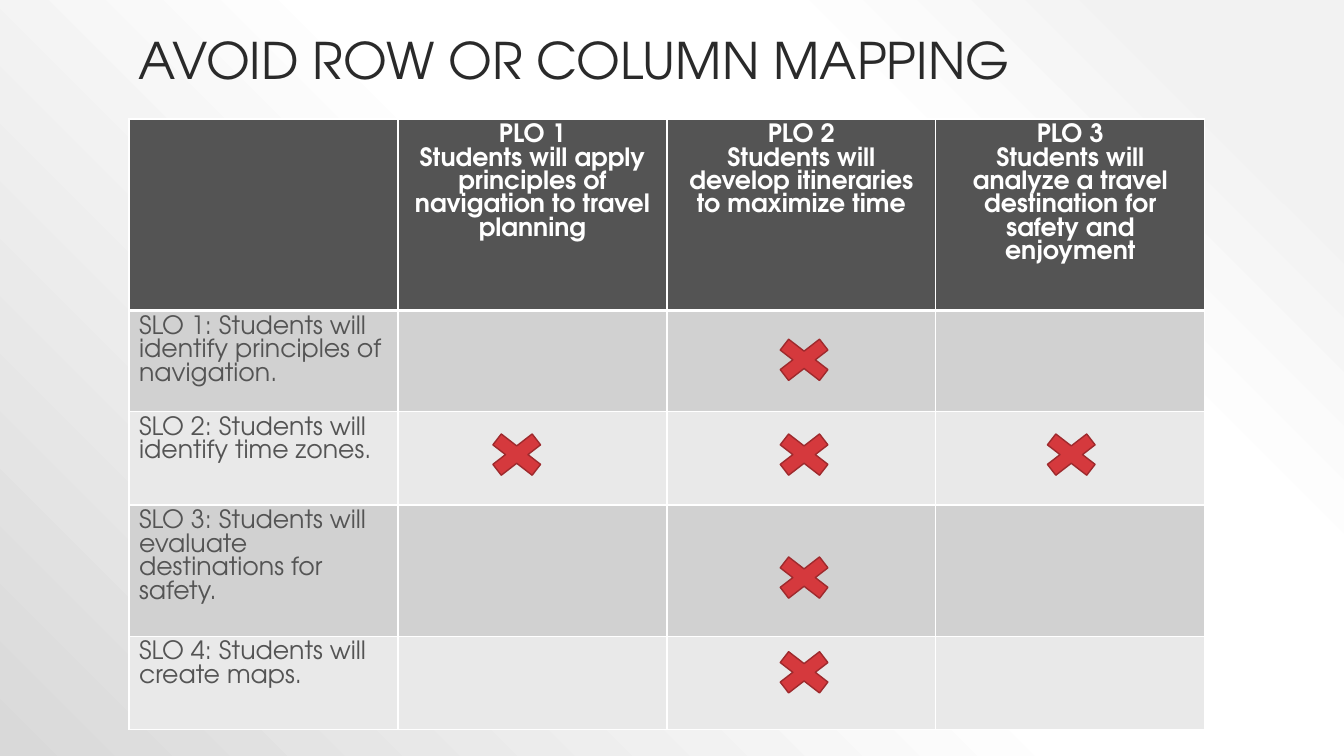
from lxml.etree import SubElement
from pptx import Presentation
from pptx.dml.color import RGBColor
from pptx.enum.shapes import MSO_SHAPE
from pptx.enum.text import MSO_ANCHOR, PP_ALIGN
from pptx.oxml import parse_xml
from pptx.oxml.ns import nsdecls, qn
from pptx.util import Inches, Pt

FONT = "TeX Gyre Adventor"
COLORS = {
    "title": "2A2A2A",
    "header": "545454",
    "body": "545454",
    "white": "FFFFFF",
    "dark_band": "D1D1D1",
    "light_band": "E9E9E9",
    "cross": "D5393D",
    "cross_edge": "9E2A2D",
}
BACKDROP_STOPS = [(10, "F2F2F2"), (28, "FFFFFF"), (48, "FFFFFF"), (100, "D9D9D9")]
PLOS = [
    "Students will apply principles of navigation to travel planning",
    "Students will develop itineraries to maximize time",
    "Students will analyze a travel destination for safety and enjoyment",
]
SLOS = [
    "Students will identify principles of navigation.",
    "Students will identify time zones.",
    "Students will evaluate destinations for safety.",
    "Students will create maps.",
]
ROW_HEIGHTS = [1.83, 0.96, 0.93, 1.25, 0.93]
CROSS_LEFT = {1: 4.75, 2: 7.6, 3: 10.25}
CROSS_TOP = {1: 3.28, 2: 4.22, 3: 5.44, 4: 6.38}
MAPPED = [(1, 2), (2, 1), (2, 2), (2, 3), (3, 2), (4, 2)]


def style_text(frame, size, color, bold=False, align=PP_ALIGN.LEFT):
    for paragraph in frame.paragraphs:
        paragraph.alignment = align
        for run in paragraph.runs:
            run.font.name = FONT
            run.font.size = Pt(size)
            run.font.bold = bold
            run.font.color.rgb = RGBColor.from_string(COLORS[color])


def add_border(cell, side, width):
    edge = SubElement(cell._tc.get_or_add_tcPr(), qn(f"a:ln{side}"), w=str(Pt(width)))
    edge_fill = SubElement(edge, qn("a:solidFill"))
    SubElement(edge_fill, qn("a:srgbClr"), val=COLORS["white"])


prs = Presentation()
prs.slide_width = Inches(13.33)
prs.slide_height = Inches(7.5)
slide = prs.slides.add_slide(prs.slide_layouts[6])

slide.background.fill.gradient()
plain_gradient = slide.background._cSld.find(".//" + qn("a:gradFill"))
stops = "".join(
    f'<a:gs pos="{position * 1000}"><a:srgbClr val="{color}"/></a:gs>'
    for position, color in BACKDROP_STOPS
)
radial_gradient = parse_xml(
    f'<a:gradFill {nsdecls("a")} rotWithShape="1"><a:gsLst>{stops}</a:gsLst>'
    '<a:path path="circle"><a:fillToRect l="100000" b="100000"/></a:path></a:gradFill>'
)
plain_gradient.getparent().replace(plain_gradient, radial_gradient)

title = slide.shapes.add_textbox(Inches(1.28), Inches(0.25), Inches(10.67), Inches(0.7))
title.text_frame.word_wrap = True
title.text_frame.vertical_anchor = MSO_ANCHOR.BOTTOM
title.text_frame.text = "AVOID ROW OR COLUMN MAPPING"
title.text_frame.paragraphs[0].line_spacing = 0.9
style_text(title.text_frame, 36, "title")

mapping = slide.shapes.add_table(
    len(SLOS) + 1, len(PLOS) + 1,
    Inches(1.28), Inches(1.18), Inches(10.67), Inches(sum(ROW_HEIGHTS)),
).table
for column in mapping.columns:
    column.width = Inches(10.67 / 4)
for row, height in zip(mapping.rows, ROW_HEIGHTS):
    row.height = Inches(height)

for number, outcome in enumerate(PLOS, start=1):
    heading = mapping.cell(0, number).text_frame
    heading.text = f"PLO {number}\n{outcome}"
    style_text(heading, 18, "white", bold=True, align=PP_ALIGN.CENTER)
for number, outcome in enumerate(SLOS, start=1):
    label = mapping.cell(number, 0).text_frame
    label.text = f"SLO {number}: {outcome}"
    style_text(label, 18, "body")

for row_index, row in enumerate(mapping.rows):
    band = "header" if row_index == 0 else "dark_band" if row_index % 2 else "light_band"
    for cell in row.cells:
        add_border(cell, "L", 1)
        add_border(cell, "R", 1)
        add_border(cell, "T", 3 if row_index == 1 else 1)
        add_border(cell, "B", 3 if row_index == 0 else 1)
        cell.fill.solid()
        cell.fill.fore_color.rgb = RGBColor.from_string(COLORS[band])

for slo, plo in MAPPED:
    cross = slide.shapes.add_shape(
        MSO_SHAPE.MATH_MULTIPLY,
        Inches(CROSS_LEFT[plo]), Inches(CROSS_TOP[slo]), Inches(0.75), Inches(0.58),
    )
    cross.shadow.inherit = False
    cross.fill.solid()
    cross.fill.fore_color.rgb = RGBColor.from_string(COLORS["cross"])
    cross.line.color.rgb = RGBColor.from_string(COLORS["cross_edge"])
    cross.line.width = Pt(1)

prs.save("out.pptx")
